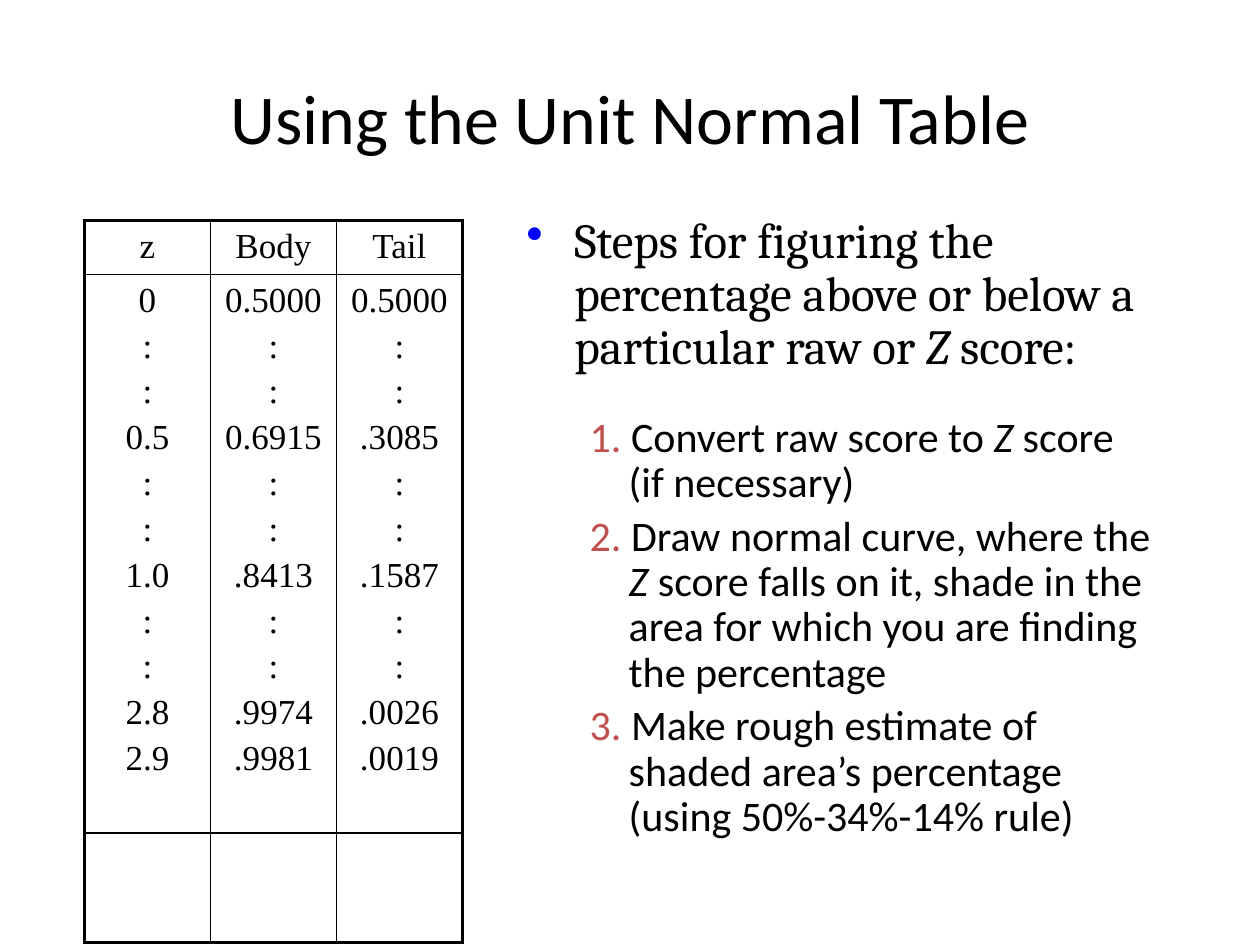
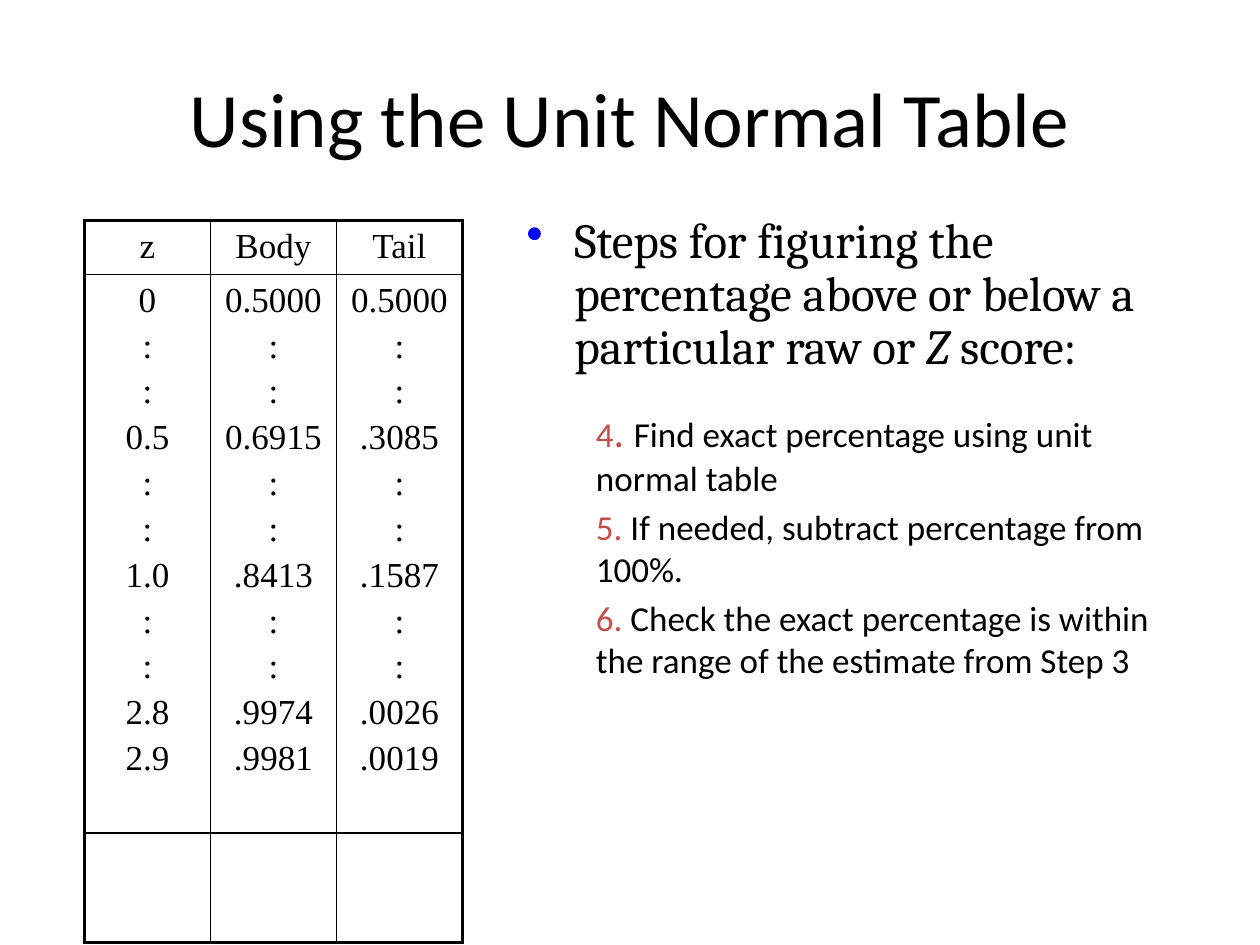
from lxml import etree
from pptx import Presentation
from pptx import util as u
from pptx.dml.color import RGBColor
from pptx.enum import text
from pptx.oxml.ns import qn

BLACK, RED, BLUE = "000000", "C0504D", "0000FF"
ITALIC = {"italic": True}
NUMBER = {"color": RED}
HEADING = "Using the Unit Normal Table"
LEAD = [("Steps for figuring the percentage above or below a particular raw or ", {}),
        ("Z ", ITALIC), ("score:", {})]
GAP = [":", ":"]
Z_TABLE = {
    "z": ["0", *GAP, "0.5", *GAP, "1.0", *GAP, "2.8", "2.9"],
    "Body": ["0.5000", *GAP, "0.6915", *GAP, ".8413", *GAP, ".9974", ".9981"],
    "Tail": ["0.5000", *GAP, ".3085", *GAP, ".1587", *GAP, ".0026", ".0019"],
}
ROW_HEIGHTS = [0.43, 4.43, 0.87]
FIRST_STEPS = [
    [("1.", NUMBER), (" Convert raw score to ", {}), ("Z ", ITALIC),
     ("score (if necessary)", {})],
    [("2.", NUMBER), (" Draw normal curve, where the ", {}), ("Z", ITALIC),
     (" score falls on it, shade in the area for which you are finding the percentage", {})],
    [("3.", NUMBER),
     (" Make rough estimate of shaded area’s percentage (using 50%-34%-14% rule)", {})],
]
LAST_STEPS = [
    [("4", NUMBER), (". ", {"color": RED, "size": 24}),
     ("Find exact percentage using unit normal table", {})],
    [("5.", NUMBER), (" If needed, subtract percentage from 100%.", {})],
    [("6.", NUMBER),
     (" Check the exact percentage is within the range of the estimate from Step 3", {})],
]


def rgb(value):
    """Turn a hex string into a colour."""
    return RGBColor.from_string(value)


def add_xml(parent, tag, **attributes):
    """Append a drawing element with the given attributes."""
    return etree.SubElement(parent, qn(f"a:{tag}"), attributes)


class Deck:
    """Holds the shared style and the slide being built."""

    def __init__(self):
        """Open an empty 4:3 presentation."""
        self.show = Presentation()
        self.show.slide_width, self.show.slide_height = u.Inches(10), u.Inches(7.5)
        self.slide = None

    def new_slide(self, title_size):
        """Start a slide with the shared heading."""
        self.slide = self.show.slides.add_slide(self.show.slide_layouts[1])
        heading = self.slide.shapes.title
        self.place(heading, 0.5, 0.3, 9, 1.25)
        frame = self.frame(heading, text.MSO_ANCHOR.MIDDLE)
        self.add_runs(frame.paragraphs[0], [(HEADING, {})], {"size": title_size}, centred=True)

    def place(self, shape, *box):
        """Move and size a shape in inches."""
        for side, length in zip(("left", "top", "width", "height"), box):
            setattr(shape, side, u.Inches(length))

    def frame(self, shape, anchor=text.MSO_ANCHOR.TOP):
        """Return a wrapping text frame that keeps its size."""
        frame = shape.text_frame
        settings = {"word_wrap": True, "auto_size": text.MSO_AUTO_SIZE.NONE,
                    "vertical_anchor": anchor}
        for name, value in settings.items():
            setattr(frame, name, value)
        return frame

    def add_runs(self, paragraph, runs, style, centred=False, spacing=None):
        """Fill a paragraph with runs that vary one base style."""
        if centred:
            paragraph.alignment = text.PP_ALIGN.CENTER
        for words, changes in runs:
            run = paragraph.add_run()
            run.text = words
            look = {"name": "Calibri", "color": BLACK, **style, **changes}
            run.font.color.rgb = rgb(look.pop("color"))
            look["size"] = u.Pt(look["size"])
            for name, value in look.items():
                setattr(run.font, name, value)
        properties = paragraph._p.get_or_add_pPr()
        add_xml(add_xml(properties, "spcBef"), "spcPct", val="20000")
        if spacing:
            paragraph.line_spacing = spacing
        return properties

    def indent(self, properties, margin, first):
        """Set the left margin and first-line indent of a paragraph."""
        for name, length in (("marL", margin), ("indent", first)):
            properties.set(name, str(u.Inches(length)))

    def lead(self):
        """Add the bulleted introduction to the steps."""
        box = [u.Inches(length) for length in (4.08, 1.67, 5.17, 1.33)]
        frame = self.frame(self.slide.shapes.add_textbox(*box))
        properties = self.add_runs(frame.paragraphs[0], LEAD,
                                   {"name": "Cambria", "size": 28}, spacing=0.9)
        self.indent(properties, 0.38, -0.38)
        add_xml(add_xml(properties, "buClr"), "srgbClr", val=BLUE)
        add_xml(properties, "buChar", char="•")

    def steps(self, steps, box, size, margin, first=0, level=0, spacing=None):
        """Put the numbered steps in the body placeholder."""
        body = self.slide.placeholders[1]
        self.place(body, *box)
        frame = self.frame(body)
        for index, runs in enumerate(steps):
            paragraph = frame.add_paragraph() if index else frame.paragraphs[0]
            paragraph.level = level
            properties = self.add_runs(paragraph, runs, {"size": size}, spacing=spacing)
            self.indent(properties, margin, first)
            add_xml(properties, "buNone")

    def borders(self, cell, thick_sides):
        """Rule a cell, with heavier lines on the outer sides."""
        properties = cell._tc.get_or_add_tcPr()
        for side in "LRTB":
            width = u.Pt(2.25 if side in thick_sides else 1)
            line = add_xml(properties, f"ln{side}", w=str(width))
            add_xml(add_xml(line, "solidFill"), "srgbClr", val=BLACK)
        cell.fill.background()

    def z_table(self):
        """Add the table of body and tail proportions."""
        rows, columns = len(ROW_HEIGHTS), len(Z_TABLE)
        box = [u.Inches(length) for length in (0.67, 1.75, columns, sum(ROW_HEIGHTS))]
        table = self.slide.shapes.add_table(rows, columns, *box).table
        table.first_row = table.horz_banding = False
        for row, height in zip(table.rows, ROW_HEIGHTS):
            row.height = u.Inches(height)
        for c, (header, values) in enumerate(Z_TABLE.items()):
            for r, lines in enumerate(([header], values, [])):
                cell = table.cell(r, c)
                for index, value in enumerate(lines):
                    frame = cell.text_frame
                    paragraph = frame.add_paragraph() if index else frame.paragraphs[0]
                    self.add_runs(paragraph, [(value, {})],
                                  {"name": "Times New Roman", "size": 20}, centred=True)
                edges = {"L": c == 0, "R": c == columns - 1, "T": r == 0, "B": r == rows - 1}
                self.borders(cell, [side for side, outer in edges.items() if outer])


def main():
    """Build both slides and save them."""
    deck = Deck()
    pages = [
        (40, {"steps": FIRST_STEPS, "box": (4.08, 3.25, 5.17, 3.83), "size": 24,
              "margin": 0.81, "first": -0.31, "level": 1, "spacing": 0.9}),
        (44, {"steps": LAST_STEPS, "box": (4.25, 3.17, 5.17, 3.58), "size": 20,
              "margin": 0.38}),
    ]
    for title_size, steps in pages:
        deck.new_slide(title_size)
        deck.steps(**steps)
        deck.lead()
        deck.z_table()
    deck.show.save("out.pptx")


if __name__ == "__main__":
    main()
